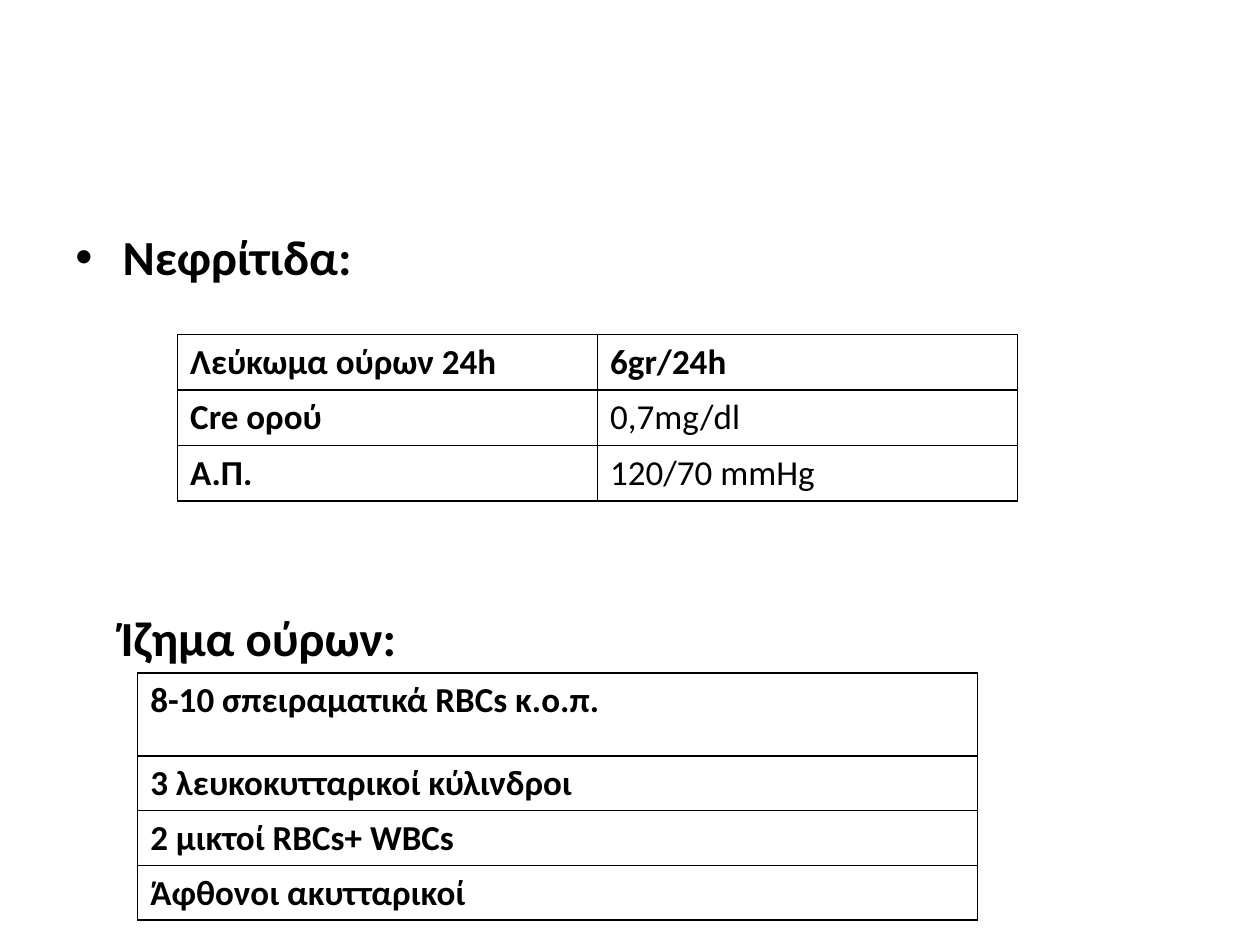
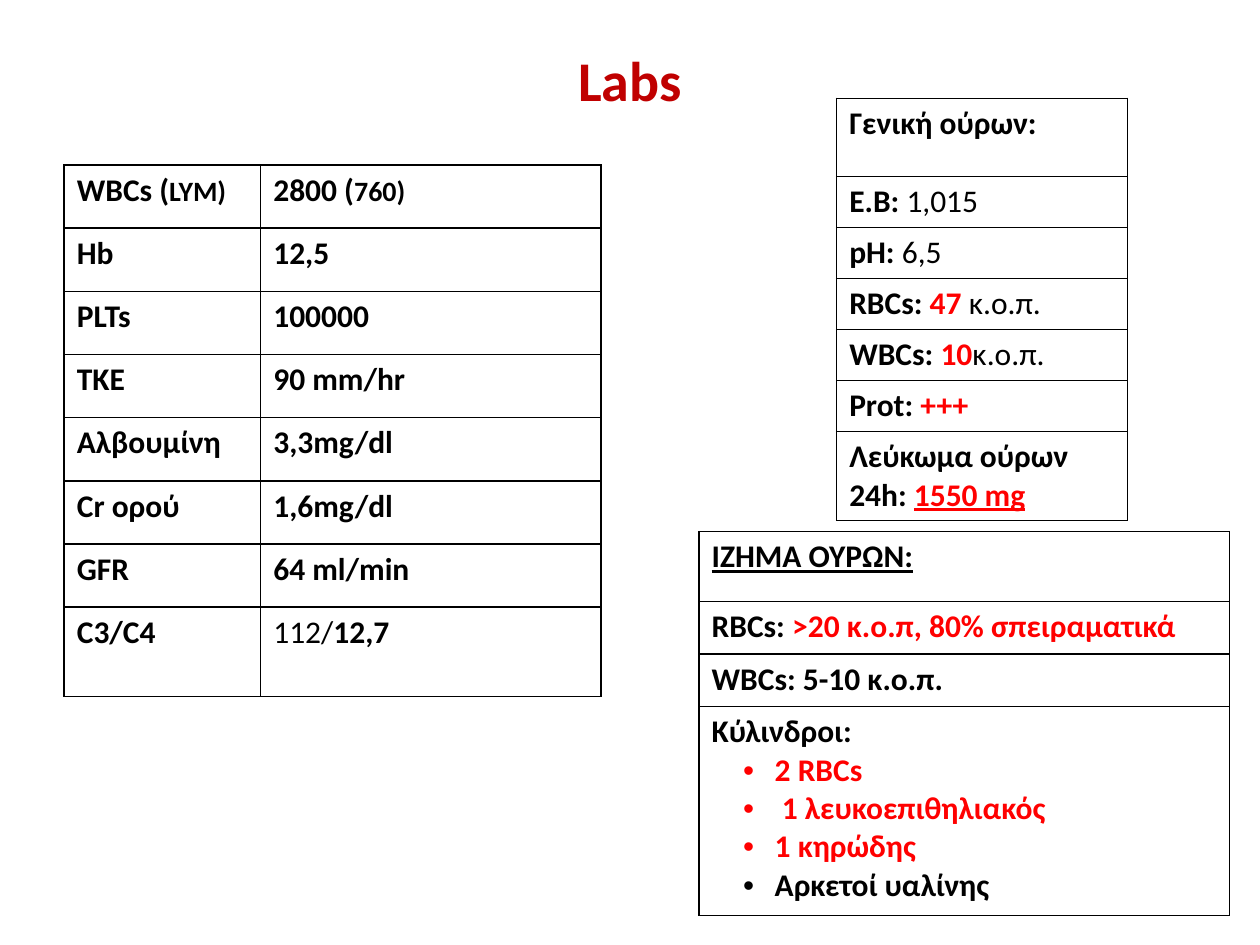
from collections import namedtuple

from lxml.etree import SubElement
from pptx import Presentation
from pptx.dml.color import RGBColor
from pptx.enum.text import MSO_ANCHOR as Anchor, PP_ALIGN as Align
from pptx.oxml.ns import qn
from pptx.util import Pt

# Shared look
BLACK = RGBColor(0, 0, 0)
TITLE_RED = RGBColor(0xC0, 0, 0)
ABNORMAL_RED = RGBColor(0xFF, 0, 0)
FONT = "Calibri"
HEADING_SIZE, TITLE_SIZE = 28, 32

Span = namedtuple("Span", "text bold color size underline",
                  defaults=(True, BLACK, None, False))


def plain(text):
    return Span(text, bold=False)


def red(text, underline=False):
    return Span(text, color=ABNORMAL_RED, underline=underline)


# Text
def write(paragraph, content, size):
    """Write a bold string, or a list of strings and spans."""
    for part in [content] if isinstance(content, (str, Span)) else content:
        span = Span(part) if isinstance(part, str) else part
        run = paragraph.add_run()
        run.text = span.text
        font = run.font
        font.name, font.size = FONT, Pt(span.size or size)
        font.bold, font.underline = span.bold, span.underline
        font.color.rgb = span.color


def add_bullet(paragraph, left, hanging):
    props = paragraph._p.get_or_add_pPr()
    props.set("marL", str(Pt(left)))
    props.set("indent", str(-Pt(hanging)))
    SubElement(props, qn("a:buFont"), typeface="Arial")
    SubElement(props, qn("a:buChar"), char="•")


def add_text(slide, box, text, size, wrap=True):
    frame = slide.shapes.add_textbox(*map(Pt, box)).text_frame
    frame.word_wrap = wrap
    write(frame.paragraphs[0], text, size)
    return frame


def add_title(slide, text):
    frame = add_text(slide, (36, 0, 648, 90),
                     Span(text, color=TITLE_RED), TITLE_SIZE)
    frame.vertical_anchor = Anchor.MIDDLE
    frame.paragraphs[0].alignment = Align.CENTER


# Tables
def add_borders(cell):
    props = cell._tc.get_or_add_tcPr()
    for side in ("lnL", "lnR", "lnT", "lnB"):
        line = SubElement(props, qn(f"a:{side}"), w=str(Pt(1)))
        fill = SubElement(line, qn("a:solidFill"))
        SubElement(fill, qn("a:srgbClr"), val=str(BLACK))


def add_grid(slide, left, top, widths, heights, rows, size):
    frame = slide.shapes.add_table(len(rows), len(widths), Pt(left), Pt(top),
                                   Pt(sum(widths)), Pt(sum(heights)))
    table = frame.table
    table.first_row = table.horz_banding = False
    for column, width in zip(table.columns, widths):
        column.width = Pt(width)
    for row, height, contents in zip(table.rows, heights, rows):
        row.height = Pt(height)
        for cell, content in zip(row.cells, contents):
            add_borders(cell)
            cell.fill.background()
            write(cell.text_frame.paragraphs[0], content, size)
    return table


# Slides
def build_nephritis(slide):
    nephritis = add_text(slide, (36, 126, 648, 356.4), "Νεφρίτιδα:", HEADING_SIZE)
    add_bullet(nephritis.paragraphs[0], 27, 27)
    add_grid(slide, 101.5, 191.2, [240, 240], [31.7] * 3, [
        ["Λεύκωμα ούρων 24h", "6gr/24h"],
        ["Cre ορού", plain("0,7mg/dl")],
        ["Α.Π.", plain("120/70 mmHg")],
    ], 20)

    add_text(slide, (61.9, 343.4, 173.5, 79.9), "Ίζημα ούρων:", HEADING_SIZE, wrap=False)
    add_grid(slide, 78.7, 384.6, [480], [47.3] + [31.3] * 3, [
        ["8-10 σπειραματικά RBCs κ.ο.π."],
        ["3 λευκοκυτταρικοί κύλινδροι"],
        ["2 μικτοί RBCs+ WBCs"],
        ["Άφθονοι ακυτταρικοί"],
    ], 20)


def build_labs(slide):
    add_title(slide, "Labs")

    # Blood tests
    add_grid(slide, 36.7, 94.3, [112.3, 194.4], [36.1] * 7 + [51], [
        [["WBCs (", Span("LYM)", size=16)], ["2800 (", Span("760)", size=16)]],
        ["Hb", "12,5"],
        ["PLTs", "100000"],
        ["ΤΚΕ", "90 mm/hr"],
        ["Αλβουμίνη", "3,3mg/dl"],
        ["Cr ορού", "1,6mg/dl"],
        ["GFR", "64 ml/min"],
        ["C3/C4", [plain("112/"), "12,7"]],
    ], 18)

    # General urine test
    add_grid(slide, 478.1, 56.2, [166.3], [44.6] + [29.15] * 5 + [50.9], [
        ["Γενική ούρων:"],
        [["E.B: ", plain("1,015")]],
        [["pH: ", plain("6,5")]],
        [["RBCs:", red(" 47 "), plain("κ.ο.π.")]],
        [["WBCs: ", red("10"), plain("κ.ο.π.")]],
        [["Prot: ", red("+++")]],
        [["Λεύκωμα ούρων 24h: ", red("1550 mg", underline=True)]],
    ], 18)

    # Urine sediment
    sediment = add_grid(slide, 399.5, 303.8, [303.2], [39.8, 30, 30, 119.5], [
        [Span("ΙΖΗΜΑ ΟΥΡΩΝ:", underline=True)],
        [["RBCs: ", red(">20 κ.ο.π, 80% σπειραματικά")]],
        ["WBCs: 5-10 κ.ο.π."],
        ["Κύλινδροι:"],
    ], 18)
    casts = sediment.cell(3, 0).text_frame
    for cast in (red("2 RBCs"), red(" 1 λευκοεπιθηλιακός"),
                 red("1 κηρώδης"), "Αρκετοί υαλίνης"):
        paragraph = casts.add_paragraph()
        paragraph.level = 1
        add_bullet(paragraph, 36, 18)
        write(paragraph, cast, 18)


def main():
    deck = Presentation()
    deck.slide_width, deck.slide_height = Pt(720), Pt(540)
    blank = deck.slide_layouts[6]
    for build in (build_nephritis, build_labs):
        build(deck.slides.add_slide(blank))
    deck.save("out.pptx")


if __name__ == "__main__":
    main()
